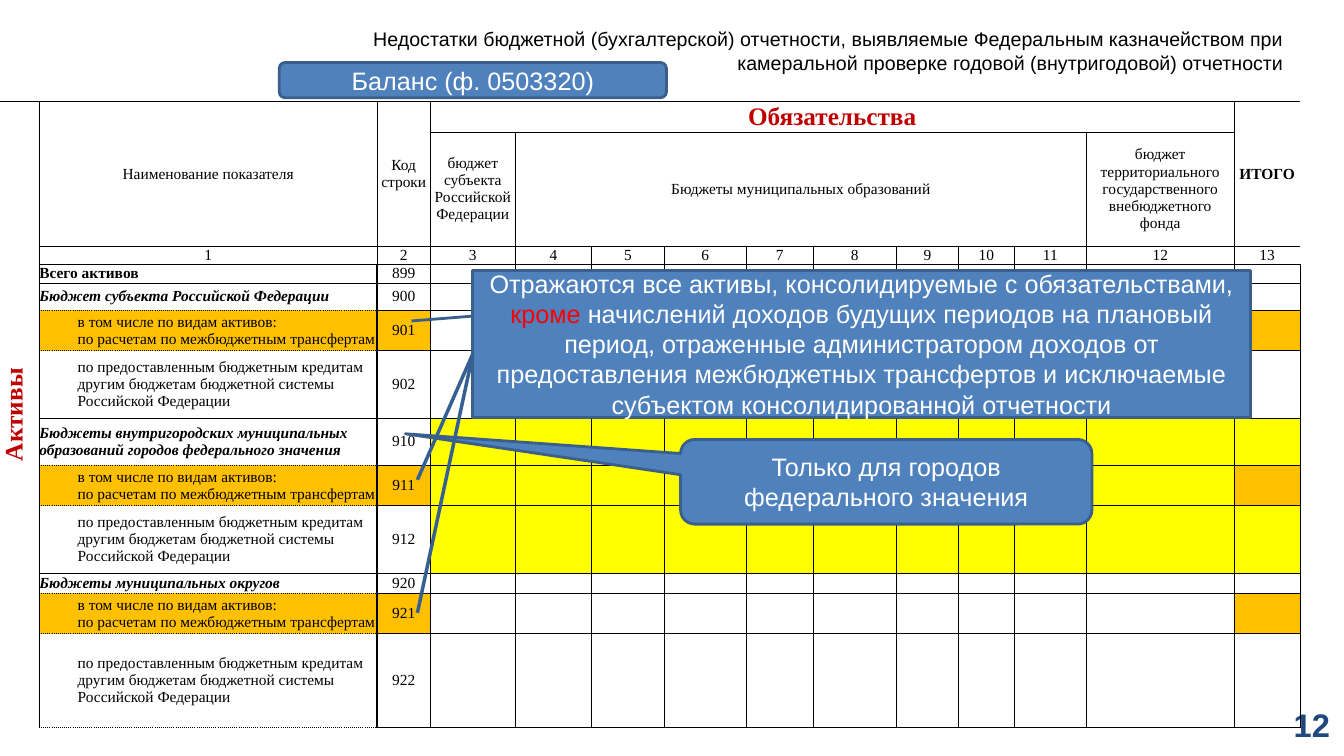
from lxml import etree
from pptx import Presentation
from pptx.dml.color import RGBColor
from pptx.enum.shapes import MSO_CONNECTOR, MSO_SHAPE
from pptx.enum.text import MSO_ANCHOR, PP_ALIGN
from pptx.oxml.ns import qn
from pptx.util import Inches, Pt

STRAIGHT = MSO_CONNECTOR.STRAIGHT
ROUNDED = MSO_SHAPE.ROUNDED_RECTANGLE
BUBBLE = MSO_SHAPE.ROUNDED_RECTANGULAR_CALLOUT
LINE_CALLOUT = MSO_SHAPE.LINE_CALLOUT_1
MIDDLE = MSO_ANCHOR.MIDDLE
LEFT, CENTER, RIGHT = PP_ALIGN.LEFT, PP_ALIGN.CENTER, PP_ALIGN.RIGHT

COLORS = {"black": "000000", "white": "FFFFFF", "navy": "1F497D", "blue": "4F81BD",
          "edge": "3A5F8C", "pointer": "376092", "crimson": "C00000", "red": "FF0000",
          "orange": "FFC000", "yellow": "FFFF00"}

COLUMNS = [0.39, 3.35, 0.53, 0.84, 0.76, 0.72, 0.81, 0.67, 0.82, 0.62, 0.55, 0.72, 1.46, 0.66]
ROWS = [0.28, 1.13, 0.18, 0.17, 0.27, 0.4, 0.67, 0.47, 0.4, 0.67, 0.2, 0.4, 0.93]
NUMBERS, TOTAL, LAST_ROW, LAST_COLUMN = 2, 3, len(ROWS) - 1, len(COLUMNS) - 1

BUDGETS = ["Бюджет субъекта Российской Федерации",
           "Бюджеты внутригородских муниципальных образований городов федерального значения",
           "Бюджеты муниципальных округов"]
TRANSFERS = "в том числе по видам активов:\vпо расчетам по межбюджетным трансфертам"
LOANS = ("по предоставленным бюджетным кредитам\vдругим бюджетам бюджетной системы\v"
         "Российской Федерации")
FEDERAL_CITIES = 1  # position in BUDGETS of the yellow block

# row, column, rows spanned, columns spanned, text
HEADERS = [(0, 1, 2, 1, "Наименование показателя"),
           (0, 2, 2, 1, "Код\vстроки"),
           (1, 3, 1, 1, "бюджет субъекта\vРоссийской Федерации"),
           (1, 4, 1, 8, "Бюджеты муниципальных образований"),
           (1, 12, 1, 1, "бюджет\vтерриториального государственного внебюджетного\vфонда")]


def rgb(name):
    return RGBColor.from_string(COLORS[name])


def style(paragraph, size, color, font="Arial", align=CENTER, bold=False, italic=False):
    paragraph.alignment = align
    for run in paragraph.runs:
        run.font.name, run.font.size = font, Pt(size)
        run.font.bold, run.font.italic = bold, italic
        run.font.color.rgb = rgb(color)


def block_of(row):
    """Return (budget, part) of a data row: part 0 heading, 1 transfers, 2 loans."""
    return divmod(row - TOTAL - 1, 3) if row > TOTAL else (None, None)


def cell_fill(row, column):
    budget, part = block_of(row)
    if part == 1 and column in (1, 2, LAST_COLUMN):
        return "orange"
    if budget == FEDERAL_CITIES and column >= 3:
        return "yellow"
    return None


def cell_borders(row, column):
    """Return side: (width in points, dash), width 0 meaning no line."""
    sides = {side: (0.5, "solid") for side in "LRTB"}
    part = block_of(row)[1]
    if column == 0:
        sides["L"] = sides["B"] = (0, "solid")
    if column == LAST_COLUMN:
        sides["R"] = (1 if row >= TOTAL else 0, "solid")
    if column >= 2 and row in (NUMBERS, TOTAL):
        sides["B" if row == NUMBERS else "T"] = (1, "solid")
    if row >= TOTAL and column in (1, 2):
        sides["R" if column == 1 else "L"] = (1, "solid")
    if column == 1:
        if part in (1, 2):
            sides["T"] = (0.5, "dot")
        if part in (0, 1) or row == LAST_ROW:
            sides["B"] = (0.5, "dot")
    return sides


def format_cell(cell, row, column):
    properties = cell._tc.get_or_add_tcPr()
    for side, (width, dash) in cell_borders(row, column).items():
        line = etree.SubElement(properties, qn(f"a:ln{side}"), w=str(Pt(width)))
        if not width:
            etree.SubElement(line, qn("a:noFill"))
            continue
        solid = etree.SubElement(line, qn("a:solidFill"))
        etree.SubElement(solid, qn("a:srgbClr"), val=COLORS["black"])
        etree.SubElement(line, qn("a:prstDash"), val=dash)
    color = cell_fill(row, column)
    if color:
        cell.fill.solid()
        cell.fill.fore_color.rgb = rgb(color)
    else:
        cell.fill.background()
    cell.margin_left = cell.margin_right = cell.margin_top = cell.margin_bottom = 0
    cell.vertical_anchor = MIDDLE
    # keeps empty cells from stretching their row
    etree.SubElement(cell.text_frame.paragraphs[0]._p, qn("a:endParaRPr"), sz="1100")


def write_cell(cell, text, size=11, color="black", **options):
    cell.text_frame.text = text
    style(cell.text_frame.paragraphs[0], size, color, "Times New Roman", **options)


def balance_table(slide, left, top):
    table = slide.shapes.add_table(len(ROWS), len(COLUMNS), Inches(left), Inches(top),
                                   Inches(sum(COLUMNS)), Inches(sum(ROWS))).table
    table.first_row = table.horz_banding = False
    for column, width in enumerate(COLUMNS):
        table.columns[column].width = Inches(width)
    for row, height in enumerate(ROWS):
        table.rows[row].height = Inches(height)
        for column in range(len(COLUMNS)):
            format_cell(table.cell(row, column), row, column)

    title = {"size": 18, "color": "crimson", "bold": True}
    headers = [(*header, {}) for header in HEADERS]
    headers += [(0, 0, len(ROWS), 1, "Активы", title),
                (0, 3, 1, 10, "Обязательства", title),
                (0, LAST_COLUMN, 2, 1, "ИТОГО", {"bold": True})]
    for row, column, down, across, text, options in headers:
        cell = table.cell(row, column)
        if down * across > 1:
            cell.merge(table.cell(row + down - 1, column + across - 1))
        write_cell(cell, text, **options)
    table.cell(0, 0)._tc.get_or_add_tcPr().set("vert", "vert270")

    for column in range(1, len(COLUMNS)):
        write_cell(table.cell(NUMBERS, column), str(column))
    write_cell(table.cell(TOTAL, 1), "Всего активов", align=LEFT, bold=True)
    write_cell(table.cell(TOTAL, 2), "899")
    for row in range(TOTAL + 1, len(ROWS)):
        budget, part = block_of(row)
        indicator = table.cell(row, 1)
        write_cell(indicator, (BUDGETS[budget], TRANSFERS, LOANS)[part], align=LEFT,
                   bold=part == 0, italic=part == 0)
        if part:
            indicator.margin_left = Inches(0.38)
        write_cell(table.cell(row, 2), str(900 + 10 * budget + part))


def text_line(slide, box, text, size, color, margins=(0.1, 0.05), bold=False):
    frame = slide.shapes.add_textbox(*map(Inches, box)).text_frame
    frame.word_wrap = True
    frame.margin_left = frame.margin_right = Inches(margins[0])
    frame.margin_top = frame.margin_bottom = Inches(margins[1])
    frame.text = text
    style(frame.paragraphs[0], size, color, align=RIGHT, bold=bold)


def callout(slide, kind, box, parts, adjustments=()):
    """Place a blue shape; parts are (text, color) pairs of one paragraph."""
    shape = slide.shapes.add_shape(kind, *map(Inches, box))
    for index, value in enumerate(adjustments):
        shape.adjustments[index] = value
    shape.shadow.inherit = False
    shape.fill.solid()
    shape.fill.fore_color.rgb = rgb("blue")
    shape.line.color.rgb = rgb("edge")
    shape.line.width = Pt(2)
    frame = shape.text_frame
    frame.word_wrap = True
    frame.vertical_anchor = MIDDLE
    paragraph = frame.paragraphs[0]
    for text, _ in parts:
        paragraph.add_run().text = text
    style(paragraph, 18, "white")
    for run, (_, color) in zip(paragraph.runs, parts):
        run.font.color.rgb = rgb(color)


def pointer(slide, start, end):
    line = slide.shapes.add_connector(STRAIGHT, *map(Inches, (*start, *end)))
    line.line.color.rgb = rgb("pointer")
    line.line.width = Pt(2.5)
    etree.SubElement(line._element.spPr, qn("a:effectLst"))


def balance_slide(slide):
    text_line(slide, (10.12, 6.99, 3.07, 0.39), "12", 23.3, "navy", (0, 0), bold=True)
    balance_table(slide, 0, 1.01)
    callout(slide, BUBBLE, (6.75, 4.36, 4.08, 0.84),
            [("Только для городов федерального значения", "white")], (-1.169, -0.567, 0.167))
    text_line(slide, (3.4, 0.22, 9.43, 0.57),
              "Недостатки бюджетной (бухгалтерской) отчетности, выявляемые Федеральным "
              "казначейством при камеральной проверке годовой (внутригодовой) отчетности",
              14, "black")
    callout(slide, LINE_CALLOUT, (4.69, 2.68, 7.71, 1.46),
            [("Отражаются все активы, консолидируемые с обязательствами, ", "white"),
             ("кроме", "red"),
             (" начислений доходов будущих периодов на плановый период, отраженные "
              "администратором доходов от предоставления межбюджетных трансфертов и "
              "исключаемые субъектом консолидированной отчетности", "white")],
            (0.313, -0.001, 0.346, -0.079))
    for code_y in (4.76, 6.08):
        pointer(slide, (4.14, code_y), (4.69, 3.51))
    callout(slide, ROUNDED, (2.77, 0.62, 3.84, 0.35), [("Баланс (ф. 0503320)", "white")])


def main():
    deck = Presentation()
    deck.slide_width, deck.slide_height = Inches(13.33), Inches(7.5)
    balance_slide(deck.slides.add_slide(deck.slide_layouts[6]))
    deck.save("out.pptx")


if __name__ == "__main__":
    main()
